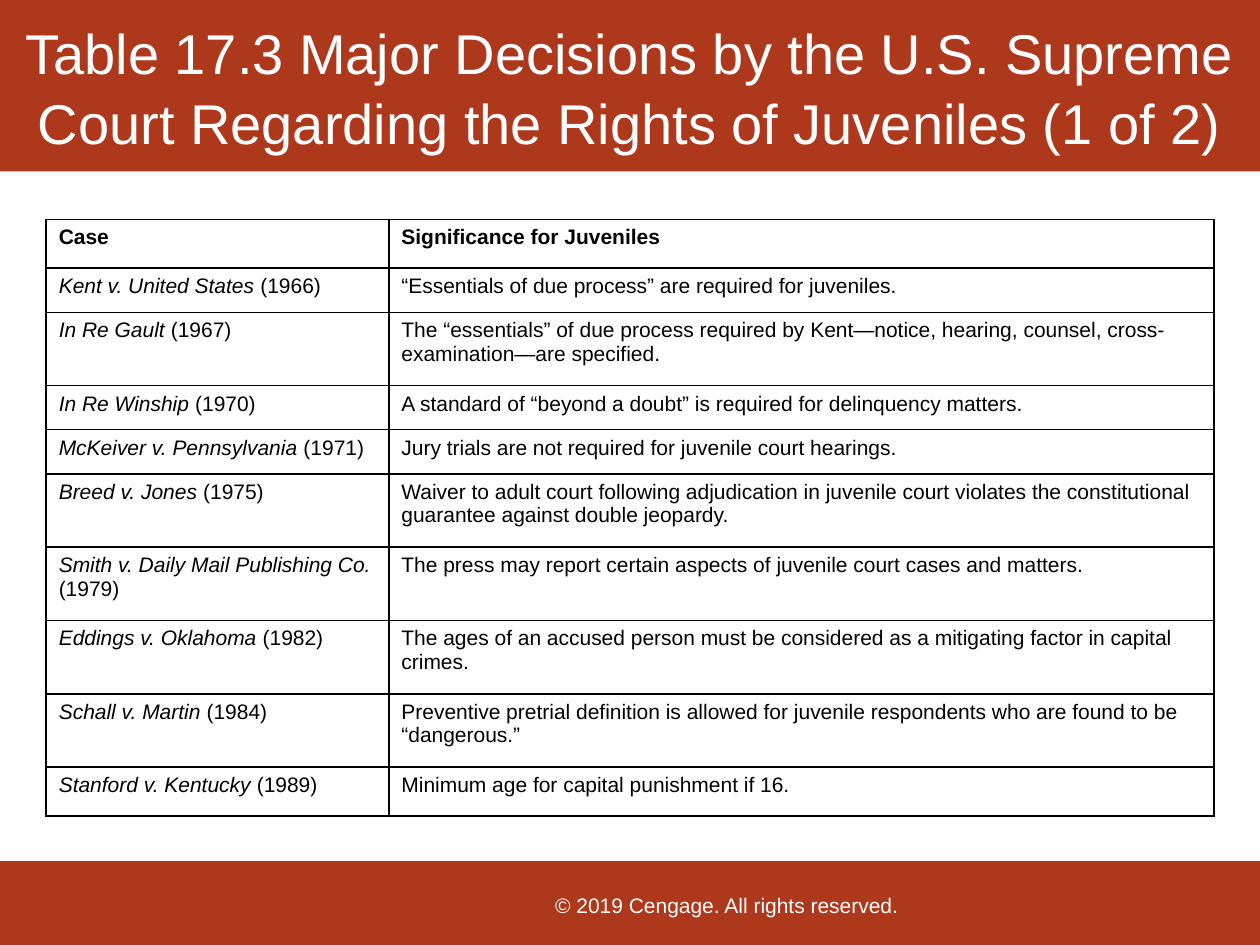
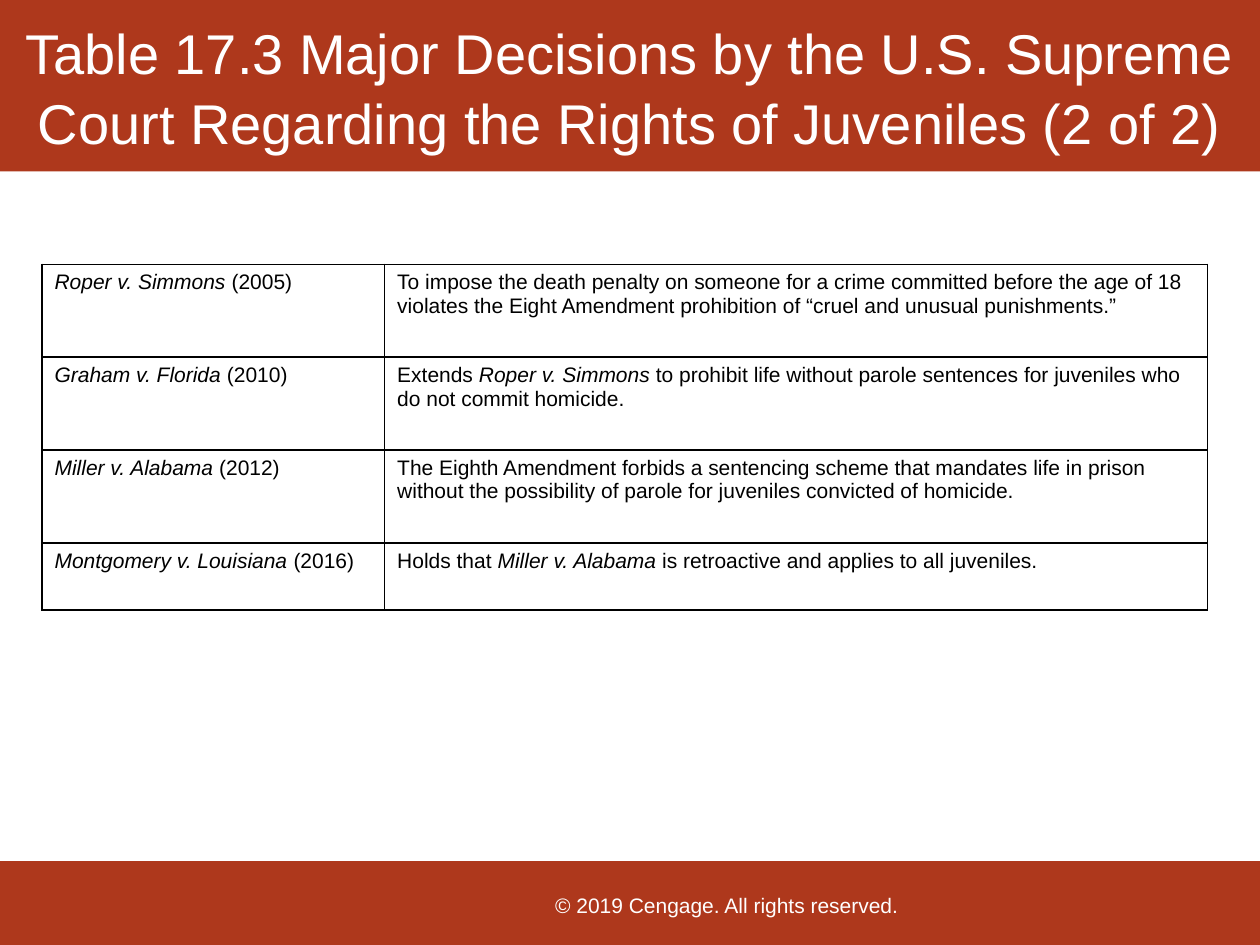
from lxml import etree
from pptx import Presentation
from pptx import util as u
from pptx.dml.color import RGBColor
from pptx.enum import shapes, text
from pptx.oxml import ns

Pt = u.Pt
RED, WHITE, BLACK = "AE381C", "FFFFFF", "000000"
FONT = "Arial"
TITLE = "Table 17.3 Major Decisions by the U.S. Supreme Court Regarding the Rights of Juveniles ({} of 2)"
COPYRIGHT = "© 2019 Cengage. All rights reserved."
HEADER, ONE_LINE, TWO_LINES = 28, 25.2, 41.9
TALL, MEDIUM = 53.1, 38.2

EARLY_CASES = [
    (HEADER, "Case", "Significance for Juveniles"),
    (ONE_LINE, "*Kent v. United States *(1966)",
     "“Essentials of due process” are required for juveniles."),
    (TWO_LINES, "*In Re Gault *(1967)",
     "The “essentials” of due process required by Kent—notice, hearing, counsel, "
     "cross-examination—are specified."),
    (ONE_LINE, "*In Re Winship *(1970)",
     "A standard of “beyond a doubt” is required for delinquency matters."),
    (ONE_LINE, "*McKeiver v. Pennsylvania *(1971)",
     "Jury trials are not required for juvenile court hearings."),
    (TWO_LINES, "*Breed v. Jones *(1975)",
     "Waiver to adult court following adjudication in juvenile court violates the "
     "constitutional guarantee against double jeopardy."),
    (TWO_LINES, "*Smith v. Daily Mail Publishing Co. *(1979)",
     "The press may report certain aspects of juvenile court cases and matters."),
    (TWO_LINES, "*Eddings v. Oklahoma *(1982)",
     "The ages of an accused person must be considered as a mitigating factor in capital crimes."),
    (TWO_LINES, "*Schall v. Martin *(1984)",
     "Preventive pretrial definition is allowed for juvenile respondents who are found to be "
     "“dangerous.”"),
    (HEADER, "*Stanford v. Kentucky *(1989)", "Minimum age for capital punishment if 16."),
]

LATER_CASES = [
    (TALL, "*Roper v. Simmons *(2005)",
     "To impose the death penalty on someone for a crime committed before the age of 18 "
     "violates the Eight Amendment prohibition of “cruel and unusual punishments.”"),
    (TALL, "*Graham v. Florida *(2010)",
     "Extends *Roper v. Simmons *to prohibit life without parole sentences for juveniles who "
     "do not commit homicide."),
    (TALL, "*Miller v. Alabama *(2012)",
     "The Eighth Amendment forbids a sentencing scheme that mandates life in prison without "
     "the possibility of parole for juveniles convicted of homicide."),
    (MEDIUM, "*Montgomery v. Louisiana *(2016)",
     "Holds that *Miller v. Alabama *is retroactive and applies to all juveniles."),
]


def rgb(value):
    """Turn a hex string into a colour."""
    return RGBColor.from_string(value)


def style(r, size, color, bold=False, italic=False):
    """Format one run."""
    r.font.name, r.font.size = FONT, Pt(size)
    r.font.bold, r.font.italic = bold, italic
    r.font.color.rgb = rgb(color)


def add_band(s, box):
    """Draw a plain red band."""
    sp = s.shapes.add_shape(shapes.MSO_SHAPE.RECTANGLE, *map(Pt, box))
    sp.shadow.inherit = False
    sp.fill.solid()
    sp.fill.fore_color.rgb = rgb(RED)
    sp.line.fill.background()


def add_label(s, box, words, size, spacing=1.0):
    """Write centred white text in the middle of a box."""
    tf = s.shapes.add_textbox(*map(Pt, box)).text_frame
    tf.word_wrap = True
    tf.vertical_anchor = text.MSO_ANCHOR.MIDDLE
    tf.text = words
    p = tf.paragraphs[0]
    p.alignment = text.PP_ALIGN.CENTER
    p.line_spacing = spacing
    style(p.runs[0], size, WHITE)


def add_borders(cell):
    """Give a cell thin black borders on all four sides."""
    tc_pr = cell._tc.get_or_add_tcPr()
    for side in "LRTB":
        ln = etree.SubElement(tc_pr, ns.qn(f"a:ln{side}"), w=str(Pt(1)))
        fill = etree.SubElement(ln, ns.qn("a:solidFill"))
        etree.SubElement(fill, ns.qn("a:srgbClr"), val=BLACK)


def fill_cell(cell, words, bold):
    """Write a cell, with the parts between asterisks in italics."""
    add_borders(cell)
    cell.fill.background()
    p = cell.text_frame.paragraphs[0]
    for i, part in enumerate(words.split("*")):
        if part:
            r = p.add_run()
            r.text = part
            style(r, 12, BLACK, bold, italic=i % 2 == 1)


def add_cases(s, left, top, widths, cases):
    """Build the table of court cases from its top left corner."""
    height = sum(case[0] for case in cases)
    frame = s.shapes.add_table(len(cases), len(widths), Pt(left), Pt(top),
                               Pt(sum(widths)), Pt(height))
    table = frame.table
    table.first_row = table.horz_banding = False
    for column, width in zip(table.columns, widths):
        column.width = Pt(width)
    for row, (row_height, *entries) in zip(table.rows, cases):
        row.height = Pt(row_height)
        for cell, words in zip(row.cells, entries):
            fill_cell(cell, words, bold=row_height == HEADER and entries[0] == "Case")


def add_case_slide(prs, number, left, top, widths, cases):
    """Add a slide with title band, case table and footer."""
    s = prs.slides.add_slide(prs.slide_layouts[6])
    add_band(s, (0, 0, 720, 98))
    add_band(s, (0, 492, 720, 48))
    add_label(s, (116.6, 494, 597.6, 46), COPYRIGHT, 12)
    add_label(s, (3.6, 2.2, 712.8, 93.6), TITLE.format(number), 32, 1.04)
    add_cases(s, left, top, widths, cases)


def main():
    """Build and save the presentation."""
    prs = Presentation()
    prs.slide_width, prs.slide_height = Pt(720), Pt(540)
    add_case_slide(prs, 1, 26.4, 125.3, (195.8, 471.6), EARLY_CASES)
    add_case_slide(prs, 2, 24, 151, (195.8, 470.2), LATER_CASES)
    prs.save("out.pptx")


if __name__ == "__main__":
    main()
